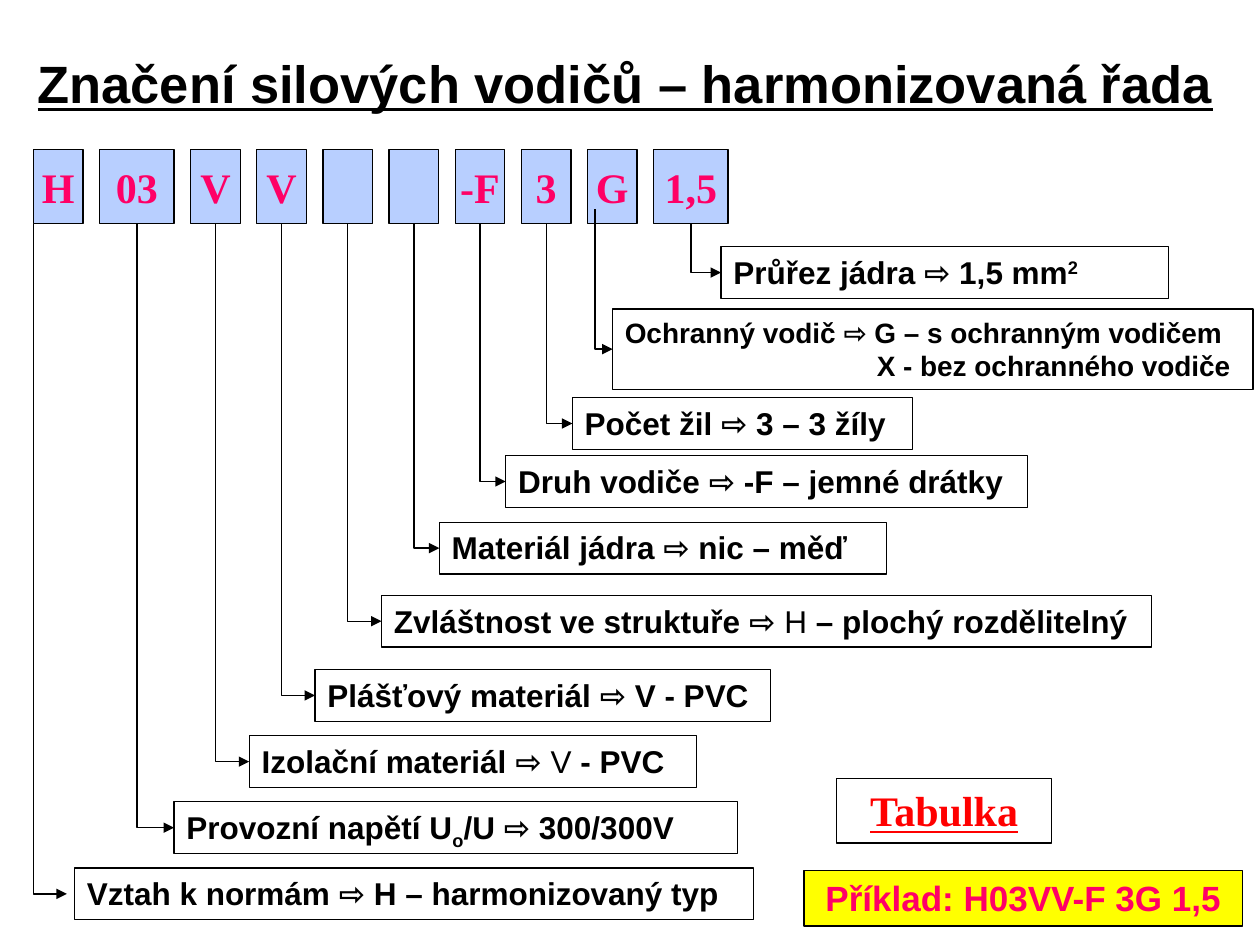
from dataclasses import dataclass

from lxml.etree import SubElement
from pptx import Presentation
from pptx.dml.color import RGBColor as RGB
from pptx.enum.shapes import MSO_CONNECTOR as CONN, MSO_SHAPE as SHAPE
from pptx.enum.text import MSO_ANCHOR as ANCHOR, MSO_AUTO_SIZE as FIT, PP_ALIGN as ALIGN
from pptx.oxml.ns import qn
from pptx.util import Pt


@dataclass(frozen=True)
class Theme:
    """Colours, fonts and type sizes of the slide."""
    ink: RGB = RGB(0, 0, 0)
    tile: RGB = RGB(0xB8, 0xCF, 0xFF)
    code: RGB = RGB(0xFF, 0, 0x66)
    link: RGB = RGB(0xFF, 0, 0)
    example: RGB = RGB(0xFF, 0xFF, 0)
    sans: str = "Arial"
    serif: str = "Times New Roman"
    title_size: int = 30
    code_size: int = 24
    example_size: int = 20
    label_size: int = 18
    small_size: int = 16
    line: float = 0.75


T = Theme()
NARROW, WIDE, GAP = 28.35, 42.5, 9.45
LABEL_H = 29.6
BASELINE = {"sub": "-25000", "sup": "30000"}

CODES = ["H", "03", "V", "V", "", "", "-F", "3", "G", "1,5"]
LABELS = [
    (42.6, 496, 388, [("Vztah k normám ⇨ H – harmonizovaný typ", "")]),
    (99.4, 458.2, 322, [("Provozní napětí U", ""), ("o", "sub"), ("/U ⇨ 300/300V", "")]),
    (142.4, 420.4, 255.6, [("Izolační materiál ⇨", ""), (" V", "plain"), (" - PVC", "")]),
    (180, 382.6, 260.4, [("Plášťový materiál ⇨ V - PVC", "")]),
    (218, 340.2, 440, [("Zvláštnost ve struktuře ⇨", ""), (" H", "plain"),
                       (" – plochý rozdělitelný", "")]),
    (251, 298.4, 255.6, [("Materiál jádra ⇨ nic – měď", "")]),
    (289, 260.4, 298, [("Druh vodiče ⇨ -F – jemné drátky", "")]),
    (327, 227.2, 194.4, [("Počet žil ⇨ 3 – 3 žíly", "")]),
    (350, 176.5, 366, [("Ochranný vodič ⇨ G – s ochranným vodičem", "")]),
    (412, 141, 255.6, [("Průřez jádra ⇨ 1,5 mm", ""), ("2", "sup")]),
]


def style(p, size, color, face, align=ALIGN.LEFT, underline=None):
    """Format a paragraph in bold."""
    f = p.font
    f.size, f.name, f.bold, f.underline = Pt(size), face, True, underline
    f.color.rgb = color
    p.alignment = align


def add_box(s, x, y, w, h, fill=None):
    """Draw an outlined rectangle and return it."""
    sp = s.shapes.add_shape(SHAPE.RECTANGLE, Pt(x), Pt(y), Pt(w), Pt(h))
    sp.shadow.inherit = False
    if fill is None:
        sp.fill.background()
    else:
        sp.fill.solid()
        sp.fill.fore_color.rgb = fill
    sp.line.color.rgb = T.ink
    sp.line.width = Pt(T.line)
    sp.text_frame.word_wrap = True
    sp.text_frame.vertical_anchor = ANCHOR.TOP
    return sp


def add_title(s, x, y, w, h):
    """Place the slide title."""
    sp = s.shapes.title
    sp.left, sp.top, sp.width, sp.height = Pt(x), Pt(y), Pt(w), Pt(h)
    tf = sp.text_frame
    tf.auto_size, tf.vertical_anchor = FIT.NONE, ANCHOR.MIDDLE
    tf.margin_left = tf.margin_right = 0
    tf.text = "Značení silových vodičů – harmonizovaná řada"
    style(tf.paragraphs[0], T.title_size, T.ink, T.sans, ALIGN.CENTER, True)


def add_tiles(s, x, y, h):
    """Draw the row of code tiles and return the arrow starting points."""
    starts = []
    for code in CODES:
        w = WIDE if code in ("03", "1,5") else NARROW
        tf = add_box(s, x, y, w, h, T.tile).text_frame
        tf.word_wrap, tf.vertical_anchor = False, ANCHOR.MIDDLE
        if code:
            tf.text = code
            style(tf.paragraphs[0], T.code_size, T.code, T.serif, ALIGN.CENTER)
        special = {"H": (x, y + h), "G": (x + 4.2, y + h - 8.3)}
        starts.append(special.get(code, (x + w / 2, y + h)))
        x += w + GAP
    return starts


def add_arrow(s, x1, y1, x2, y2):
    """Draw an arrow that runs down and then right."""
    across, down = x2 - x1, y2 - y1
    left, top = (x1 + x2 - down) / 2, (y1 + y2 - across) / 2
    c = s.shapes.add_connector(CONN.ELBOW, Pt(left + down), Pt(top), Pt(left), Pt(top + across))
    c.line.color.rgb = T.ink
    c.line.width = Pt(T.line)
    pr = c._element.spPr
    pr.find(qn("a:xfrm")).set("rot", "16200000")
    pr.find(qn("a:prstGeom")).set("prst", "bentConnector2")
    SubElement(pr.find(qn("a:ln")), qn("a:tailEnd"), type="triangle")
    SubElement(pr, qn("a:effectLst"))


def add_label(s, x, y, w, runs, second=None):
    """Draw an explanation box, with an optional indented second line."""
    h, size = (46, T.small_size) if second else (LABEL_H, T.label_size)
    tf = add_box(s, x, y, w, h).text_frame
    p = tf.paragraphs[0]
    style(p, size, T.ink, T.sans)
    for text, kind in runs:
        r = p.add_run()
        r.text = text
        if kind == "plain":
            r.font.bold = False
        elif kind:
            r.font._element.set("baseline", BASELINE[kind])
    if second:
        p = tf.add_paragraph()
        p.text = second
        style(p, size, T.ink, T.sans)
        p._p.get_or_add_pPr().set("marL", str(Pt(144)))
    return y + h / 2


def add_labels(s, starts):
    """Draw each explanation and the arrow leading to it."""
    for code, (x1, y1), (x, y, w, runs) in zip(CODES, starts, LABELS):
        second = "X - bez ochranného vodiče" if code == "G" else None
        middle = add_label(s, x, y, w, runs, second)
        add_arrow(s, x1, y1, x - 4.4 if code == "H" else x, middle)


def add_callout(s, x, y, w, h, text, size, color, face, fill=None, underline=None):
    """Draw a box with one centred line."""
    tf = add_box(s, x, y, w, h, fill).text_frame
    tf.text = text
    style(tf.paragraphs[0], size, color, face, ALIGN.CENTER, underline)


def main():
    """Build the slide and save it."""
    prs = Presentation()
    prs.slide_width, prs.slide_height = Pt(720), Pt(540)
    s = prs.slides.add_slide(prs.slide_layouts[5])
    add_title(s, 14.4, 19.4, 686, 55.4)
    add_labels(s, add_tiles(s, 19.2, 85.4, 42.5))
    add_callout(s, 478, 445, 123, 36.7, "Tabulka", T.code_size, T.link, T.serif, underline=True)
    add_callout(s, 459.4, 497.5, 250.6, 31.7, "Příklad: H03VV-F 3G 1,5",
                T.example_size, T.code, T.sans, T.example)
    prs.save("out.pptx")


if __name__ == "__main__":
    main()
